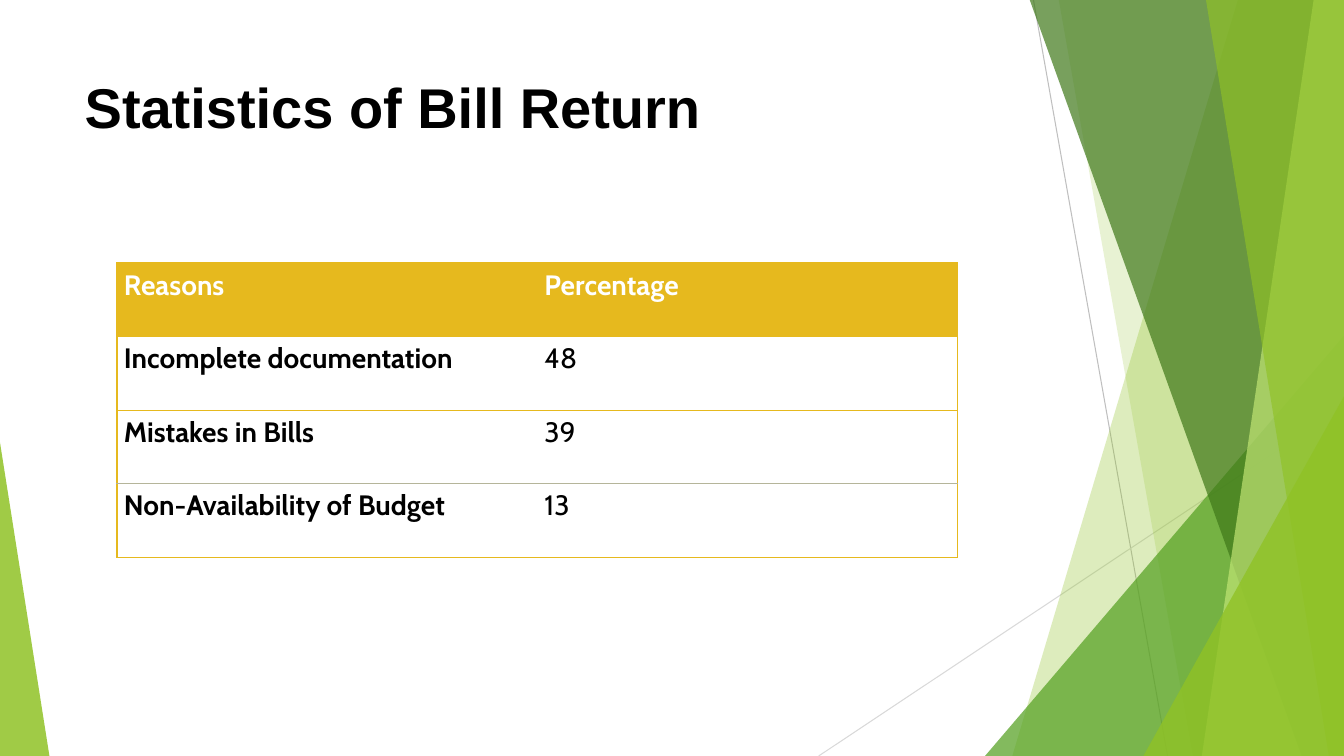
from dataclasses import dataclass

from lxml.etree import SubElement
from pptx import Presentation
from pptx.dml.color import RGBColor
from pptx.enum.shapes import MSO_CONNECTOR, MSO_SHAPE
from pptx.enum.text import MSO_ANCHOR, PP_ALIGN
from pptx.oxml.ns import qn
from pptx.util import Inches, Pt

WIDTH, HEIGHT = 13.33, 7.5


@dataclass(frozen=True)
class Theme:
    black: str = "000000"
    white: str = "FFFFFF"
    gold: str = "E6B91E"
    rule: str = "B5B59A"
    grey: str = "BFBFBF"
    pale_grey: str = "D9D9D9"
    lime: str = "90C226"
    pale_lime: str = "C0E474"
    green: str = "54A021"
    dark_green: str = "3F7819"
    title_font: str = "Arial"
    table_font: str = "Cabin"
    title_size: int = 40
    table_size: int = 20


def apply(target, values):
    for name, value in values.items():
        setattr(target, name, value)


class SlideBuilder:
    def __init__(self, slide, theme):
        self.slide, self.shapes, self.theme = slide, slide.shapes, theme

    def add_text(self, frame, text, font, size, color, bold):
        para = frame.paragraphs[0]
        para.alignment = PP_ALIGN.LEFT
        span = para.add_run()
        span.text = text
        apply(span.font, {"name": font, "size": Pt(size), "bold": bold})
        span.font.color.rgb = RGBColor.from_string(color)
        return para

    def line(self, start, end, color):
        points = [Inches(value) for value in (*start, *end)]
        connector = self.shapes.add_connector(MSO_CONNECTOR.STRAIGHT, *points)
        connector.line.color.rgb = RGBColor.from_string(color)
        connector.line.width = Pt(0.75)
        SubElement(connector._element.spPr, qn("a:effectLst"))

    def paint(self, shape, color, opacity):
        shape.shadow.inherit = False
        shape.line.fill.background()
        shape.fill.solid()
        shape.fill.fore_color.rgb = RGBColor.from_string(color)
        fill_color = shape._element.spPr.find(qn("a:solidFill"))[0]
        SubElement(fill_color, qn("a:alpha"), val=str(opacity * 1000))

    def slab(self, top_x, bottom_x, color, opacity):
        """Band from a slanted left edge to the right side of the slide."""
        corners = [(top_x, -0.01), (WIDTH, -0.01), (WIDTH, HEIGHT), (bottom_x, HEIGHT)]
        points = [(Inches(x), Inches(y)) for x, y in corners]
        outline = self.shapes.build_freeform(*points[0])
        outline.add_line_segments(points[1:], close=True)
        self.paint(outline.convert_to_shape(), color, opacity)

    def triangle(self, left, top, width, apex, color, opacity):
        """Triangle standing on the bottom edge of the slide."""
        area = [Inches(value) for value in (left, top, width, HEIGHT - top)]
        shape = self.shapes.add_shape(MSO_SHAPE.ISOSCELES_TRIANGLE, *area)
        shape.adjustments[0] = apex
        self.paint(shape, color, opacity)

    def title(self, text):
        box = self.shapes.title
        apply(box, {"left": Inches(0.74), "top": Inches(0.67),
                    "width": Inches(9.4), "height": Inches(1.44)})
        apply(box.text_frame, {"word_wrap": True, "vertical_anchor": MSO_ANCHOR.TOP})
        self.add_text(box.text_frame, text, self.theme.title_font,
                      self.theme.title_size, self.theme.black, True)

    def border(self, cell, side, color, width):
        properties = cell._tc.get_or_add_tcPr()
        edge = SubElement(properties, qn(f"a:ln{side}"), w=str(Pt(width)))
        if color:
            fill = SubElement(edge, qn("a:solidFill"))
            SubElement(fill, qn("a:srgbClr"), val=color)
        else:
            SubElement(edge, qn("a:noFill"))

    def table(self, rows, left, top, column_width, row_height):
        theme = self.theme
        row_count, column_count = len(rows), len(rows[0])
        table = self.shapes.add_table(
            row_count, column_count, Inches(left), Inches(top),
            Inches(column_width * column_count), Inches(row_height * row_count)).table
        apply(table, {"first_row": False, "horz_banding": False})
        for column in table.columns:
            column.width = Inches(column_width)
        gold, thin, none = (theme.gold, 1), (theme.rule, 0.5), (None, 1)
        # Horizontal edges from top to bottom; the last inner one is thin
        edges = [gold] * (row_count - 1) + [thin, gold]
        for r, values in enumerate(rows):
            table.rows[r].height = Inches(row_height)
            for c, text in enumerate(values):
                cell = table.cell(r, c)
                apply(cell, {"margin_left": Inches(0.07), "margin_right": Inches(0.07),
                             "margin_top": 0, "margin_bottom": 0,
                             "vertical_anchor": MSO_ANCHOR.TOP})
                self.border(cell, "L", *(gold if c == 0 else none))
                self.border(cell, "R", *(gold if c == column_count - 1 else none))
                self.border(cell, "T", *edges[r])
                self.border(cell, "B", *edges[r + 1])
                cell.fill.solid()
                fill = theme.gold if r == 0 else theme.white
                cell.fill.fore_color.rgb = RGBColor.from_string(fill)
                para = self.add_text(cell.text_frame, text, theme.table_font, theme.table_size,
                                     theme.white if r == 0 else theme.black, r == 0 or c == 0)
                para.line_spacing = 1.15


def main():
    deck = Presentation()
    apply(deck, {"slide_width": Inches(WIDTH), "slide_height": Inches(HEIGHT)})
    theme = Theme()
    page = SlideBuilder(deck.slides.add_slide(deck.slide_layouts[5]), theme)

    # Background facets, from back to front
    page.line((10.25, 0), (11.58, HEIGHT), theme.grey)
    page.line((WIDTH, 4.03), (8.12, HEIGHT), theme.pale_grey)
    page.slab(12.28, 10.04, theme.lime, 30)
    page.slab(10.5, 11.83, theme.lime, 20)
    page.triangle(9.77, 3.33, 3.56, 1, theme.green, 72)
    page.slab(10.21, 12.91, theme.dark_green, 70)
    page.slab(13.03, 11.92, theme.pale_lime, 70)
    page.slab(11.96, 13.18, theme.lime, 65)
    page.triangle(11.34, 3.93, 1.99, 1, theme.lime, 80)
    page.triangle(0, 4.39, 0.49, 0, theme.lime, 85)

    # Title and table
    page.title("Statistics of Bill Return")
    page.table([("Reasons", "Percentage"),
                ("Incomplete documentation", "48"),
                ("Mistakes in Bills", "39"),
                ("Non-Availability of Budget", "13")],
               left=1.16, top=2.61, column_width=4.17, row_height=0.73)

    deck.save("out.pptx")


if __name__ == "__main__":
    main()
